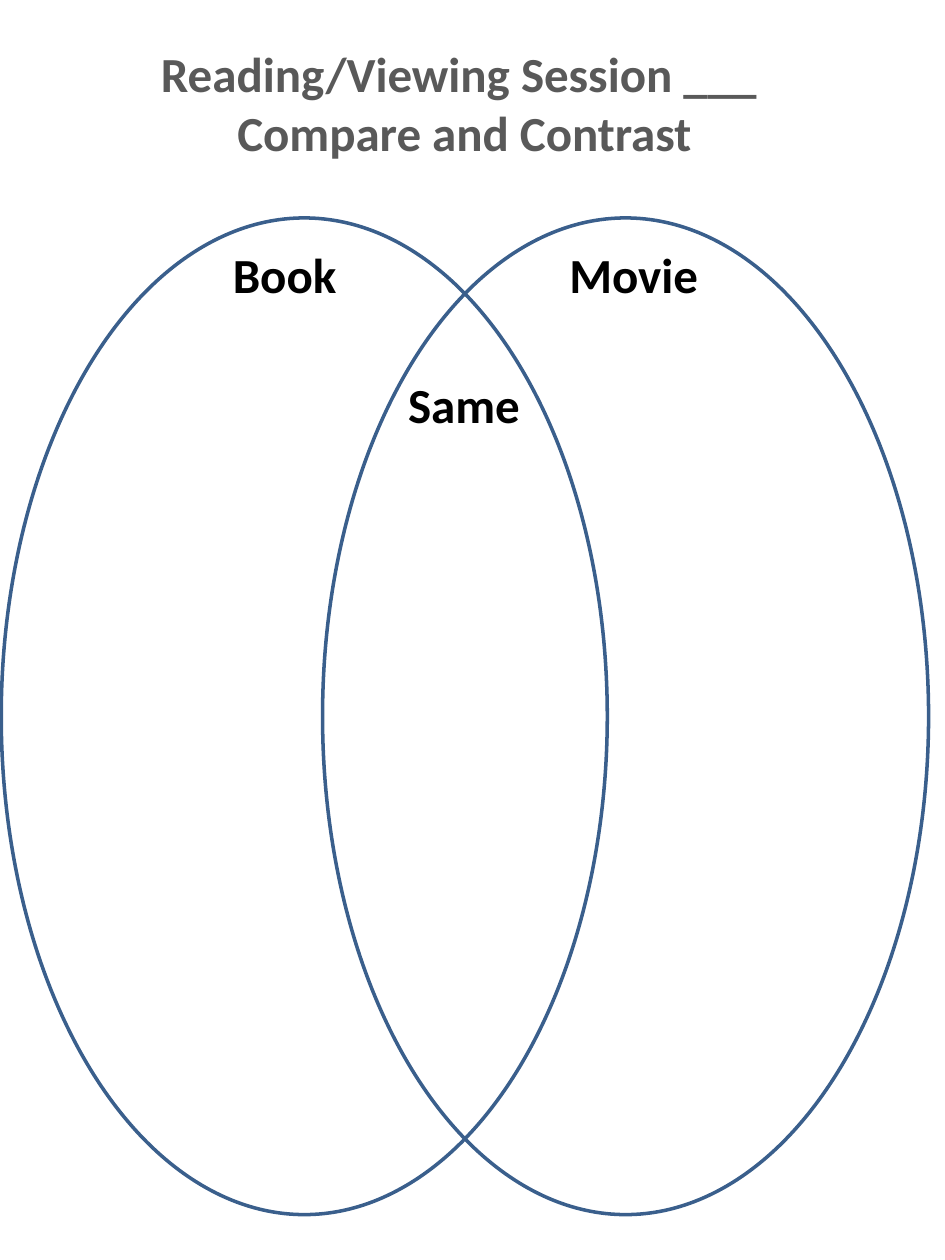
from dataclasses import dataclass

import pptx
import pptx.dml.color
import pptx.enum.shapes
import pptx.enum.text
import pptx.util
from pptx.util import Inches

COLORS = {"title": "595959", "label": "000000", "outline": "3A5F8C"}
FONT = "Calibri"
OVAL_TOP, OVAL_WIDTH, OVAL_HEIGHT = 1.73, 4.81, 7.91
OVAL_LEFTS = (0.01, 2.56)
LABEL_HEIGHT = 0.57


@dataclass
class Label:
    text: str
    left: float
    top: float
    width: float


LABELS = [
    Label("Book", 1.75, 1.89, 1.03),
    Label("Movie", 4.42, 1.89, 1.24),
    Label("Same", 3.14, 2.92, 1.1),
]


def rgb(name: str) -> pptx.dml.color.RGBColor:
    return pptx.dml.color.RGBColor.from_string(COLORS[name])


def write_text(s, text: str, color: str, align: pptx.enum.text.PP_ALIGN) -> None:
    """Fill a shape with bold, unwrapped text, one paragraph per line."""
    tf = s.text_frame
    tf.text = text
    tf.word_wrap = False
    tf.auto_size = pptx.enum.text.MSO_AUTO_SIZE.SHAPE_TO_FIT_TEXT
    for p in tf.paragraphs:
        p.alignment = align
        p.font.name = FONT
        p.font.size = pptx.util.Pt(28)
        p.font.bold = True
        p.font.color.rgb = rgb(color)


def add_title(slide) -> None:
    s = slide.shapes.title
    s.left, s.top = Inches(1.15), Inches(0.29)
    s.width, s.height = Inches(5.07), Inches(1.04)
    write_text(s, "Reading/Viewing Session ___ \nCompare and Contrast", "title",
               pptx.enum.text.PP_ALIGN.CENTER)


def add_oval(slide, left: float) -> None:
    s = slide.shapes.add_shape(
        pptx.enum.shapes.MSO_SHAPE.OVAL, Inches(left), Inches(OVAL_TOP),
        Inches(OVAL_WIDTH), Inches(OVAL_HEIGHT))
    s.shadow.inherit = False
    s.fill.background()
    s.line.color.rgb = rgb("outline")
    s.line.width = pptx.util.Pt(2)


def add_label(slide, label: Label) -> None:
    s = slide.shapes.add_textbox(
        Inches(label.left), Inches(label.top),
        Inches(label.width), Inches(LABEL_HEIGHT))
    write_text(s, label.text, "label", pptx.enum.text.PP_ALIGN.LEFT)


def main() -> None:
    prs = pptx.Presentation()
    prs.slide_width, prs.slide_height = Inches(7.5), Inches(10)
    slide = prs.slides.add_slide(prs.slide_layouts.get_by_name("Title Only"))
    add_title(slide)
    for left in OVAL_LEFTS:
        add_oval(slide, left)
    for label in LABELS:
        add_label(slide, label)
    prs.save("out.pptx")


if __name__ == "__main__":
    main()
